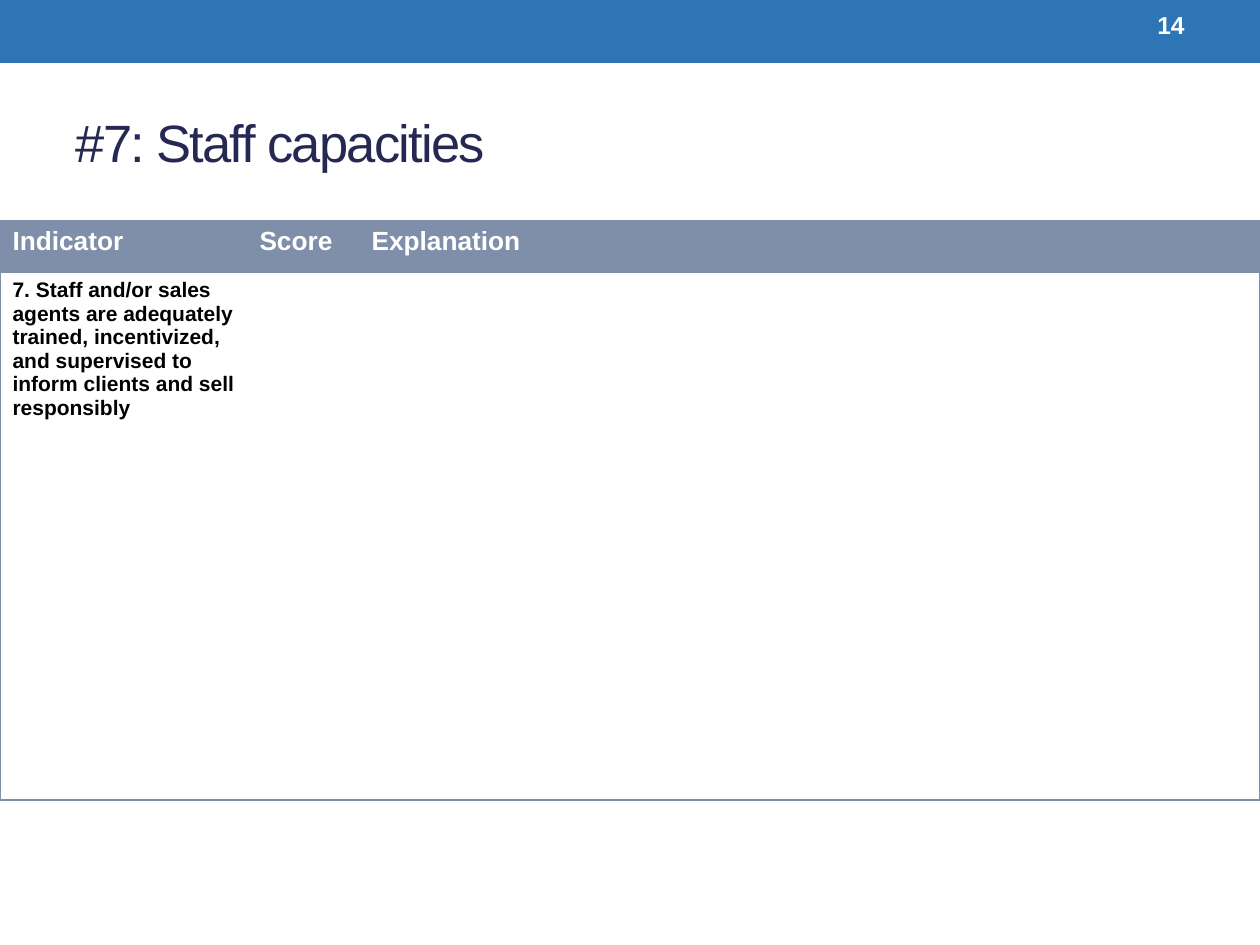
from dataclasses import dataclass

from lxml.etree import SubElement
from pptx import Presentation
from pptx.dml.color import RGBColor
from pptx.enum.shapes import MSO_SHAPE as Shape
from pptx.enum.text import MSO_ANCHOR as Anchor, PP_ALIGN as Align
from pptx.oxml.ns import qn
from pptx.util import Inches, Pt


@dataclass(frozen=True)
class Theme:
    """Colours, font and type sizes of the slide."""
    font: str = "Arial"
    band: str = "2E75B6"
    title: str = "242852"
    rule: str = "7F8FA9"
    light: str = "FFFFFF"
    dark: str = "000000"
    title_size: float = 30
    header_size: float = 15
    body_size: float = 12
    number_size: float = 14
    rule_width: float = 0.75


THEME = Theme()


def style(paragraph, size, color, bold=False):
    """Set the font of a whole paragraph."""
    font = paragraph.font
    font.name = THEME.font
    font.size = Pt(size)
    font.bold = bold
    font.color.rgb = RGBColor.from_string(color)


def set_borders(cell, ruled):
    """Rule the named sides of a cell and clear the others."""
    properties = cell._tc.get_or_add_tcPr()
    for side in "LRTB":
        line = SubElement(properties, qn(f"a:ln{side}"), w=str(Pt(THEME.rule_width)))
        if side in ruled:
            fill = SubElement(line, qn("a:solidFill"))
            SubElement(fill, qn("a:srgbClr"), val=THEME.rule)
        else:
            SubElement(line, qn("a:noFill"))


def add_band(slide, left, top, width, height, number):
    """Draw the top band with the slide number at its right."""
    band = slide.shapes.add_shape(Shape.RECTANGLE, left, top, width, height)
    band.shadow.inherit = False
    band.fill.solid()
    band.fill.fore_color.rgb = RGBColor.from_string(THEME.band)
    band.line.fill.background()

    box_width = Inches(1.17)
    box = slide.shapes.add_textbox(
        left + width - Inches(0.5) - box_width, top + Inches(0.02), box_width, Inches(0.36))
    frame = box.text_frame
    frame.word_wrap = True
    frame.vertical_anchor = Anchor.MIDDLE
    paragraph = frame.paragraphs[0]
    paragraph.text = number
    paragraph.alignment = Align.RIGHT
    style(paragraph, THEME.number_size, THEME.light, bold=True)


def place_title(slide, left, top, width, height, text):
    """Move and format the title placeholder."""
    title = slide.shapes.title
    title.left, title.top, title.width, title.height = left, top, width, height
    frame = title.text_frame
    frame.vertical_anchor = Anchor.MIDDLE
    paragraph = frame.paragraphs[0]
    paragraph.alignment = Align.LEFT
    run = paragraph.add_run()
    run.text = text
    run.font._element.set("spc", "-100")
    style(paragraph, THEME.title_size, THEME.title)


def add_indicator_table(slide, left, top, width, height, rows):
    """Add the indicator table with a filled header and an outlined body."""
    header_height = Inches(0.41)
    indicator_width, score_width = Inches(1.96), Inches(0.89)
    widths = [indicator_width, score_width, width - indicator_width - score_width]
    table = slide.shapes.add_table(len(rows), len(widths), left, top, width, height).table
    for column, column_width in zip(table.columns, widths):
        column.width = column_width
    table.rows[0].height = header_height
    table.rows[1].height = height - header_height

    for row_index, texts in enumerate(rows):
        is_header = row_index == 0
        for column_index, text in enumerate(texts):
            cell = table.cell(row_index, column_index)
            sides = "TB" + {0: "L", len(widths) - 1: "R"}.get(column_index, "")
            set_borders(cell, sides)
            if is_header:
                cell.fill.solid()
                cell.fill.fore_color.rgb = RGBColor.from_string(THEME.rule)
            else:
                cell.fill.background()
            paragraph = cell.text_frame.paragraphs[0]
            paragraph.text = text
            if is_header:
                style(paragraph, THEME.header_size, THEME.light, bold=True)
            else:
                paragraph.space_after = Pt(10)
                style(paragraph, THEME.body_size, THEME.dark, bold=True)


def main():
    """Build and save the slide."""
    presentation = Presentation()
    presentation.slide_width, presentation.slide_height = Inches(10), Inches(7.5)
    slide = presentation.slides.add_slide(presentation.slide_layouts[5])
    width = presentation.slide_width
    add_band(slide, 0, 0, width, Inches(0.5), "14")
    place_title(slide, Inches(0.5), Inches(0.58), Inches(9), Inches(1.08),
                "#7: Staff capacities")
    add_indicator_table(slide, 0, Inches(1.75), width, Inches(4.6), [
        ["Indicator", "Score", "Explanation"],
        ["7. Staff and/or sales agents are adequately trained, incentivized, "
         "and supervised to inform clients and sell responsibly", "", ""],
    ])
    presentation.save("out.pptx")


if __name__ == "__main__":
    main()
